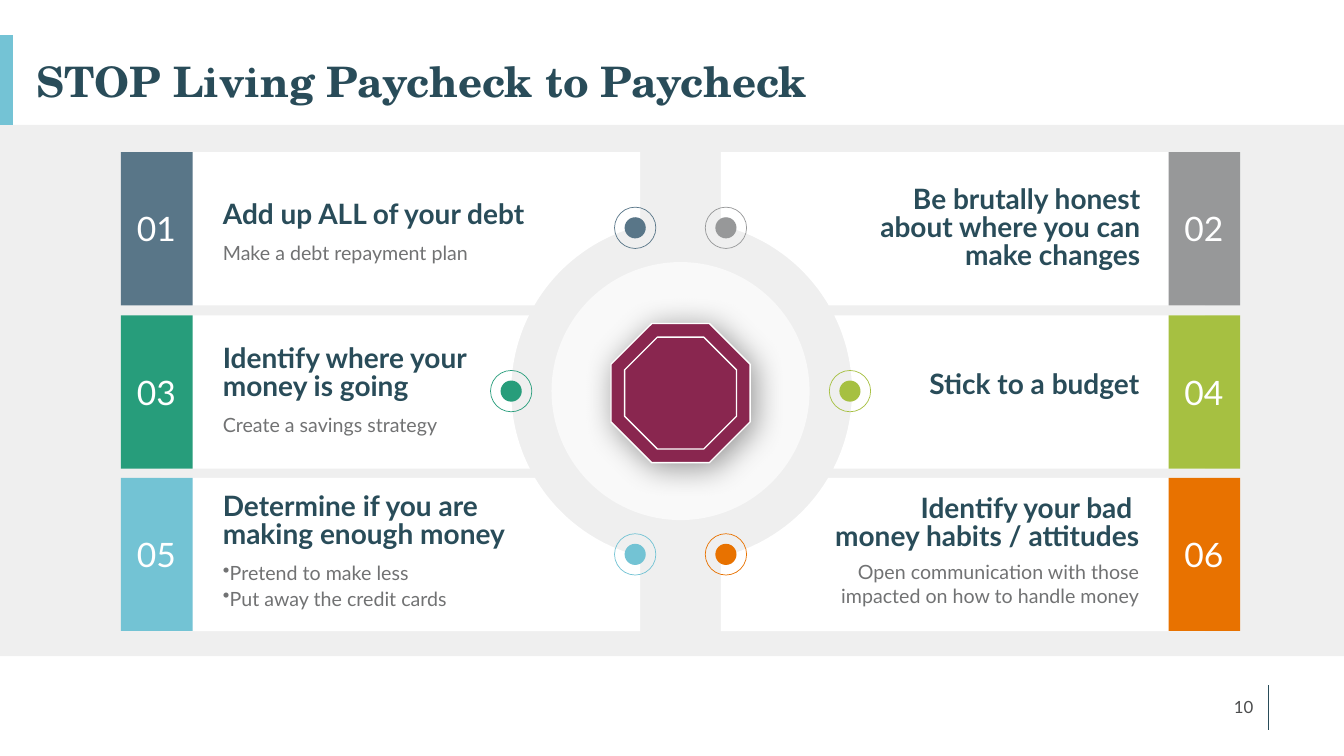
from math import sqrt

from lxml import etree
from pptx import Presentation
from pptx import util as u
from pptx.dml import color
from pptx.enum import shapes, text
from pptx.oxml import ns

LATO = "Lato"
INK, GRAY, WHITE = "294C59", "717273", "FFFFFF"
LEFT, CENTER, RIGHT = text.PP_ALIGN.LEFT, text.PP_ALIGN.CENTER, text.PP_ALIGN.RIGHT
TOP, MIDDLE, BOTTOM = text.MSO_ANCHOR.TOP, text.MSO_ANCHOR.MIDDLE, text.MSO_ANCHOR.BOTTOM
RECT, OVAL = shapes.MSO_SHAPE.RECTANGLE, shapes.MSO_SHAPE.OVAL
OCTAGON = shapes.MSO_SHAPE.OCTAGON

HUB_X, HUB_Y, HUB_RADIUS = 6.76, 3.88, 1.69
ROW_TOPS, ROW_HEIGHT = (1.51, 3.13, 4.74), 1.52
TAB_WIDTH = 0.71
SIDES = (
    {"tab": 1.2, "outer": 1.59, "inner": 6.35, "sign": -1},
    {"tab": 11.59, "outer": 11.95, "inner": 7.15, "sign": 1},
)
HEADING = {"size": 20, "color": INK, "bold": True, "line_spacing": u.Pt(20)}
DETAIL = {"size": 14, "color": GRAY, "line_spacing": 1.1, "space_before": u.Pt(6)}

STEPS = (
    ("597688", (6.3, 2.26), (2.21, 1.92, 3.38, 0.5), TOP,
     [("Add up ALL of your debt", HEADING | {"line_spacing": 1.1}),
      ("Make a debt repayment plan", DETAIL)]),
    ("979899", (7.2, 2.26), (8.64, 1.9, 2.67, 0.74), MIDDLE,
     [("Be brutally honest about where you can make changes", HEADING)]),
    ("279D7B", (5.07, 3.88), (2.21, 3.51, 2.67, 0.74), MIDDLE,
     [("Identify where your money is going", HEADING),
      ("Create a savings strategy", DETAIL)]),
    ("A6C041", (8.43, 3.88), (8.42, 3.69, 2.88, 0.5), TOP,
     [("Stick to a budget", HEADING)]),
    ("73C3D4", (6.3, 5.5), (2.21, 4.9, 3.24, 0.5), TOP,
     [("Determine if you are making enough money", HEADING),
      ("Pretend to make less", DETAIL | {"bullet": "•"}),
      ("Put away the credit cards", DETAIL | {"bullet": "•", "space_before": u.Pt(0)})]),
    ("E87200", (7.2, 5.5), (7.18, 4.92, 4.12, 0.5), TOP,
     [("Identify your bad \vmoney habits / attitudes", HEADING),
      ("Open communication with those impacted on how to handle money",
       DETAIL | {"line_spacing": 1.0, "indent": 0.67})]),
)


def paint(target, value):
    """Give a fill or font the solid colour of a hex string."""
    if hasattr(target, "solid"):
        target.solid()
        target.fore_color.rgb = color.RGBColor.from_string(value)
    else:
        target.color.rgb = color.RGBColor.from_string(value)


def finish(shape, fill=None, line=None, width=1, alpha=None):
    """Set the fill and outline of a shape and drop its shadow."""
    shape.shadow.inherit = False
    if fill:
        paint(shape.fill, fill)
    else:
        shape.fill.background()
    if line:
        paint(shape.line.fill, line)
        shape.line.width = u.Pt(width)
    else:
        shape.line.fill.background()
    if alpha:
        tint = shape.fill._xPr.find(".//" + ns.qn("a:srgbClr"))
        etree.SubElement(tint, ns.qn("a:alpha"), val=str(alpha * 1000))
    return shape


def add_preset(parent, kind, area, **style):
    """Add a preset shape at left, top, width, height in inches."""
    return finish(parent.shapes.add_shape(kind, *map(u.Inches, area)), **style)


def add_centered(parent, kind, center, size, **style):
    """Add a square preset shape around a centre point."""
    left, top = (value - size / 2 for value in center)
    return add_preset(parent, kind, (left, top, size, size), **style)


def add_line(page, start, end, value, width):
    """Add a straight line without a shadow."""
    line = page.shapes.add_connector(
        shapes.MSO_CONNECTOR.STRAIGHT, *map(u.Inches, start + end))
    paint(line.line.fill, value)
    line.line.width = u.Pt(width)
    etree.SubElement(line._element.spPr, ns.qn("a:effectLst"))


def add_soft_shadow(shape):
    """Cast a blurred shadow towards the lower right."""
    effects = shape._element.spPr.find(ns.qn("a:effectLst"))
    shadow = etree.SubElement(
        effects, ns.qn("a:outerShdw"), blurRad=str(u.Pt(22)), dist=str(u.Pt(4)),
        dir=str(45 * 60000), algn="tl", rotWithShape="0")
    tint = etree.SubElement(shadow, ns.qn("a:srgbClr"), val="000000")
    etree.SubElement(tint, ns.qn("a:alpha"), val="40000")


def add_text(page, area, lines, align=LEFT, anchor=TOP, margins=(0, 0)):
    """Add a wrapped text box from pairs of wording and format values."""
    frame = page.shapes.add_textbox(*map(u.Inches, area)).text_frame
    across, down = map(u.Inches, margins)
    settings = {"word_wrap": True, "vertical_anchor": anchor,
                "margin_left": across, "margin_right": across,
                "margin_top": down, "margin_bottom": down}
    for name, value in settings.items():
        setattr(frame, name, value)
    for index, (words, style) in enumerate(lines):
        para = frame.paragraphs[0] if index == 0 else frame.add_paragraph()
        para.text = words
        para.alignment = align
        for name in ("line_spacing", "space_before"):
            if name in style:
                setattr(para, name, style[name])
        properties = para._p.get_or_add_pPr()
        if "indent" in style:
            properties.set("marL", str(u.Inches(style["indent"])))
        if "bullet" in style:
            properties.set("marL", "0")
            properties.set("indent", str(u.Inches(-0.31)))
            etree.SubElement(properties, ns.qn("a:buChar"), char=style["bullet"])
        font = {"name": style.get("font", LATO), "size": u.Pt(style["size"]),
                "bold": style.get("bold", False)}
        for span in para.runs:
            for name, value in font.items():
                setattr(span.font, name, value)
            paint(span.font, style["color"])


def add_panel(page, side, top):
    """Add a white panel whose inner edge follows the hub circle."""
    samples = 38
    edge = []
    for index in range(samples + 1):
        y = top + ROW_HEIGHT * index / samples
        reach = sqrt(max(0, HUB_RADIUS ** 2 - (y - HUB_Y) ** 2))
        x = HUB_X + side["sign"] * reach
        limit = max if side["sign"] > 0 else min
        edge.append((limit(x, side["inner"]), y))
    outline = [(side["outer"], top), *edge, (side["outer"], top + ROW_HEIGHT)]
    points = [(u.Inches(x), u.Inches(y)) for x, y in outline]
    builder = page.shapes.build_freeform(*points[0])
    builder.add_line_segments(points[1:], close=True)
    finish(builder.convert_to_shape(), fill=WHITE)


def add_marker(page, center, value):
    """Add a dot inside a thin ring as one group."""
    group = page.shapes.add_group_shape()
    add_centered(group, OVAL, center, 0.21, fill=value)
    add_centered(group, OVAL, center, 0.41, line=value, width=0.5)


def add_step(page, index, value, marker, area, anchor, lines):
    """Add one numbered step with its panel, tab, wording and marker."""
    row, column = divmod(index, 2)
    side, top = SIDES[column], ROW_TOPS[row]
    add_panel(page, side, top)
    add_preset(page, RECT, (side["tab"], top, TAB_WIDTH, ROW_HEIGHT), fill=value)
    add_text(page, (side["tab"] + 0.09, top + 0.52, 0.52, 0.47),
             [(f"{index + 1:02}", {"size": 24, "color": WHITE})], CENTER, MIDDLE)
    add_text(page, area, lines, (LEFT, RIGHT)[column], anchor)
    add_marker(page, marker, value)


def main():
    """Build the slide and save the deck."""
    deck = Presentation()
    deck.slide_width, deck.slide_height = u.Inches(13.33), u.Inches(7.5)
    page = deck.slides.add_slide(deck.slide_layouts[6])
    add_preset(page, RECT, (0, 1.24, 13.33, 5.27), fill="E1E1E1", alpha=50)
    add_line(page, (0.06, 1.24), (0.06, 0.35), "74C3D5", 10)
    add_line(page, (12.58, 6.8), (12.58, 7.24), INK, 0.75)
    add_text(page, (0.26, 0.35, 11.5, 0.76),
             [("STOP Living Paycheck to Paycheck",
               {"font": "TeX Gyre Schola", "size": 30, "color": INK, "bold": True,
                "line_spacing": 0.9})], anchor=BOTTOM, margins=(0.1, 0.05))
    add_text(page, (9.53, 6.81, 3, 0.4), [("10", {"size": 12, "color": "4B4C4D"})],
             RIGHT, MIDDLE, (0.1, 0.05))
    hub = (6.75, 3.9)
    add_centered(page, OVAL, (6.75, 3.88), 2.56, fill=WHITE, alpha=63)
    add_soft_shadow(add_centered(page, OCTAGON, hub, 1.38, fill="89264F", line=WHITE))
    for index, step in enumerate(STEPS):
        add_step(page, index, *step)
    add_centered(page, OCTAGON, hub, 1.11, line=WHITE)
    deck.save("out.pptx")


if __name__ == "__main__":
    main()
